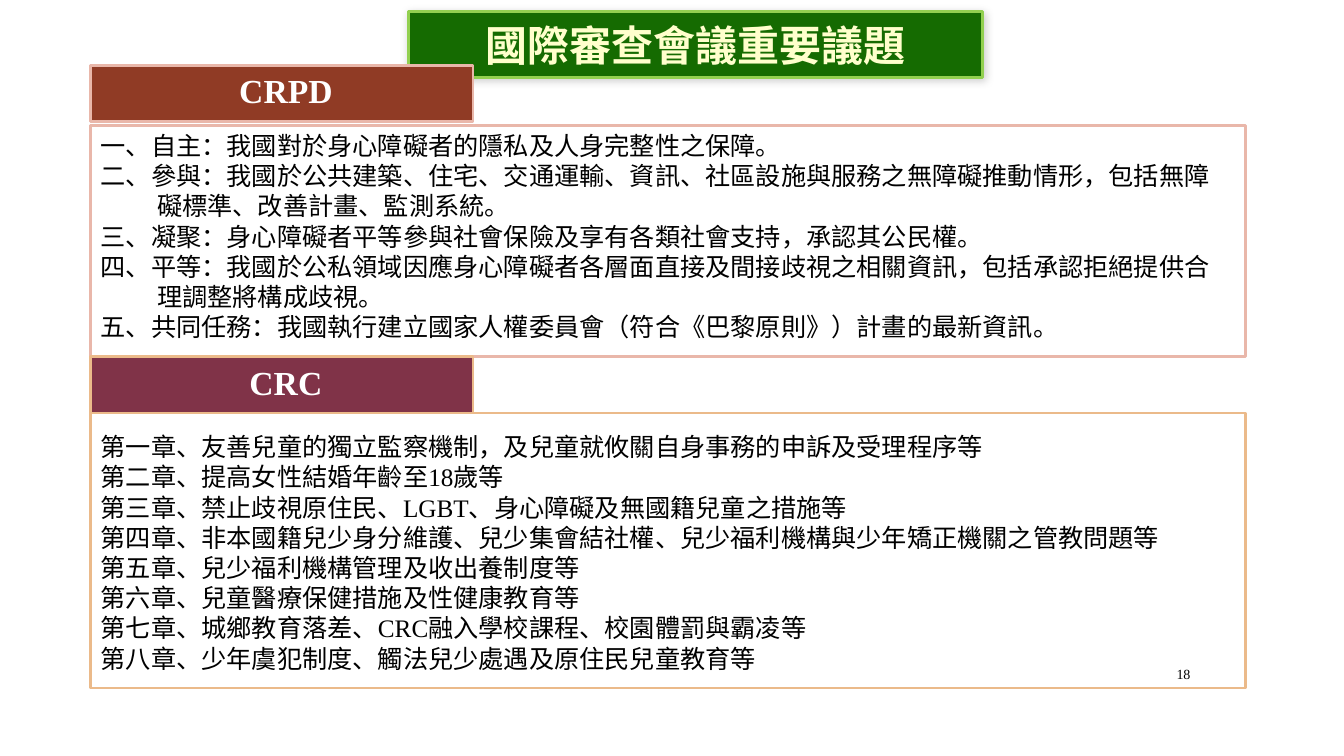
"""Build the slide on the key issues of the international review meetings."""
from itertools import groupby

from lxml import etree
from pptx import Presentation
from pptx.dml.color import RGBColor
from pptx.enum.shapes import MSO_SHAPE
from pptx.enum.text import MSO_ANCHOR, PP_ALIGN
from pptx.oxml import parse_xml
from pptx.oxml.ns import nsdecls, qn
from pptx.util import Cm, Pt

RECTANGLE = MSO_SHAPE.RECTANGLE
MIDDLE, TOP = MSO_ANCHOR.MIDDLE, MSO_ANCHOR.TOP
LEFT, CENTER, RIGHT = PP_ALIGN.LEFT, PP_ALIGN.CENTER, PP_ALIGN.RIGHT
LATIN_FONT, CHINESE_FONT = "Times New Roman", "Noto Sans CJK SC"

TITLE = "國際審查會議重要議題"
CRPD_ISSUES = [
    "一、自主：我國對於身心障礙者的隱私及人身完整性之保障。",
    "二、參與：我國於公共建築、住宅、交通運輸、資訊、社區設施與服務之無障礙推動情形，包括無障礙標準、改善計畫、監測系統。",
    "三、凝聚：身心障礙者平等參與社會保險及享有各類社會支持，承認其公民權。",
    "四、平等：我國於公私領域因應身心障礙者各層面直接及間接歧視之相關資訊，包括承認拒絕提供合理調整將構成歧視。",
    "五、共同任務：我國執行建立國家人權委員會（符合《巴黎原則》）計畫的最新資訊。",
]
CRC_ISSUES = [
    "第一章、友善兒童的獨立監察機制，及兒童就攸關自身事務的申訴及受理程序等",
    "第二章、提高女性結婚年齡至18歲等",
    "第三章、禁止歧視原住民、LGBT、身心障礙及無國籍兒童之措施等",
    "第四章、非本國籍兒少身分維護、兒少集會結社權、兒少福利機構與少年矯正機關之管教問題等",
    "第五章、兒少福利機構管理及收出養制度等",
    "第六章、兒童醫療保健措施及性健康教育等",
    "第七章、城鄉教育落差、CRC融入學校課程、校園體罰與霸凌等",
    "第八章、少年虞犯制度、觸法兒少處遇及原住民兒童教育等",
]


def color(value):
    """Return the colour of a hex string."""
    return RGBColor.from_string(value)


def lengths(box):
    """Return the left, top, width and height of a box as lengths."""
    return [Cm(value) for value in box]


def outline(shape, fill, line):
    """Set the fill and the two-point outline of a shape."""
    if fill:
        shape.fill.solid()
        shape.fill.fore_color.rgb = color(fill)
    else:
        shape.fill.background()
    shape.line.color.rgb = color(line)
    shape.line.width = Pt(2)


def write(shape, lines, size, ink, bold=False, align=LEFT, anchor=TOP,
          margins=(0.25, 0.13, 0.25, 0.13), spacing=1.0, hanging=0):
    """Write one paragraph per line, with Latin and Chinese spans set apart."""
    frame = shape.text_frame
    left, top, right, bottom = lengths(margins)
    frame_format = {"word_wrap": True, "vertical_anchor": anchor,
                    "margin_left": left, "margin_top": top,
                    "margin_right": right, "margin_bottom": bottom}
    for name, value in frame_format.items():
        setattr(frame, name, value)
    for index, line in enumerate(lines):
        para = frame.add_paragraph() if index else frame.paragraphs[0]
        para_format = {"alignment": align, "line_spacing": spacing,
                       "space_before": Pt(0), "space_after": Pt(0)}
        for name, value in para_format.items():
            setattr(para, name, value)
        if hanging:
            properties = para._p.get_or_add_pPr()
            properties.set("marL", str(Cm(hanging)))
            properties.set("indent", str(-Cm(hanging)))
        for is_latin, letters in groupby(line, str.isascii):
            span = para.add_run()
            span.text = "".join(letters)
            font_format = {"name": LATIN_FONT if is_latin else CHINESE_FONT,
                           "size": Pt(size), "bold": bold}
            for name, value in font_format.items():
                setattr(span.font, name, value)
            span.font.color.rgb = color(ink)
            east_asian = etree.SubElement(span.font._element, qn("a:ea"))
            east_asian.set("typeface", CHINESE_FONT)


def add_title(page, box):
    """Turn the title placeholder into a rounded green banner with a shadow."""
    title = page.shapes.title
    title.left, title.top, title.width, title.height = lengths(box)
    properties = title._element.spPr
    properties.append(parse_xml(
        f'<a:prstGeom {nsdecls("a")} prst="roundRect"><a:avLst/></a:prstGeom>'))
    outline(title, "156B01", "92D050")
    properties.append(parse_xml(
        f'<a:effectLst {nsdecls("a")}>'
        f'<a:outerShdw blurRad="{Pt(6)}" dist="{Pt(1)}" dir="2700000" rotWithShape="0">'
        '<a:srgbClr val="000000"><a:alpha val="20000"/></a:srgbClr>'
        '</a:outerShdw></a:effectLst>'))
    write(title, [TITLE], 30, "FFFFCC", bold=True, align=CENTER, anchor=MIDDLE)


def add_rectangle(page, box, fill, line):
    """Add a flat outlined rectangle."""
    shape = page.shapes.add_shape(RECTANGLE, *lengths(box))
    shape.shadow.inherit = False
    outline(shape, fill, line)
    return shape


def add_section(page, box, label, issues, fill, line, gap, text_offset, hanging=0):
    """Add a section: a label tab above an outlined panel of issues."""
    left, top, width, height = box
    tab_height = 1.42
    panel_top = top + tab_height + gap
    tab = add_rectangle(page, (left, top, 9.63, tab_height), fill, line)
    write(tab, [label], 24, "FFFFFF", bold=True, align=CENTER, anchor=MIDDLE,
          margins=(0.33, 0.13, 0.13, 0.13), spacing=0.85)
    panel_height = height - tab_height - gap
    add_rectangle(page, (left, panel_top, width, panel_height), None, line)
    text = page.shapes.add_textbox(
        *lengths((left, panel_top + text_offset, width - 0.23, panel_height - 0.4)))
    write(text, issues, 18, "000000", hanging=hanging)


def add_page_number(page, box, number):
    """Add the page number."""
    text = page.shapes.add_textbox(*lengths(box))
    write(text, [number], 10, "000000", align=RIGHT, anchor=MIDDLE)


def main():
    """Build and save the deck."""
    deck = Presentation()
    deck.slide_width, deck.slide_height = Cm(33.87), Cm(19.05)
    page = deck.slides.add_slide(deck.slide_layouts[5])
    add_title(page, (10.29, 0.3, 14.48, 1.65))
    add_section(page, (2.29, 1.65, 29.11, 7.34), "CRPD", CRPD_ISSUES,
                "903B25", "E9B7AA", gap=0.1, text_offset=-0.02, hanging=1.42)
    add_section(page, (2.29, 8.99, 29.11, 8.35), "CRC", CRC_ISSUES,
                "803348", "EBBA8A", gap=0, text_offset=0.33)
    add_page_number(page, (28.75, 16.59, 1.5, 0.79), "18")
    deck.save("out.pptx")


if __name__ == "__main__":
    main()
